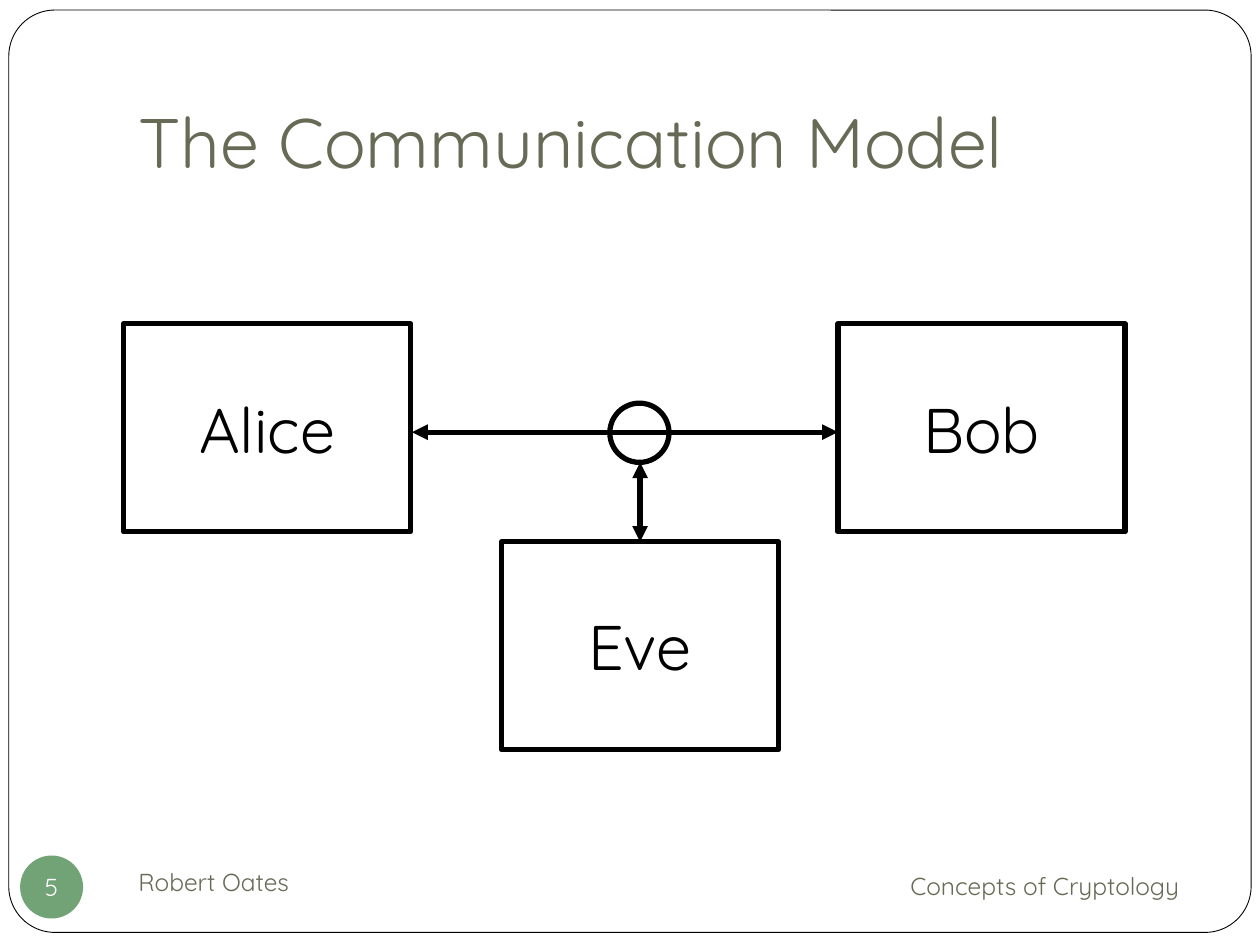
from lxml import etree
from pptx import Presentation
from pptx import util as u
from pptx.dml import color
from pptx.enum import shapes, text
from pptx.oxml import ns

BLACK = color.RGBColor(0x00, 0x00, 0x00)
WHITE = color.RGBColor(0xFF, 0xFF, 0xFF)
OLIVE = color.RGBColor(0x67, 0x6A, 0x55)
GREEN = color.RGBColor(0x72, 0xA3, 0x76)

LEFT, MID, RIGHT = text.PP_ALIGN.LEFT, text.PP_ALIGN.CENTER, text.PP_ALIGN.RIGHT
RECT, OVAL = shapes.MSO_SHAPE.RECTANGLE, shapes.MSO_SHAPE.OVAL
ROUND = shapes.MSO_SHAPE.ROUNDED_RECTANGLE


class Sketch:
    """Draws styled elements on the current slide."""

    font = "Quicksand"
    weight = 3

    def __init__(self, slide):
        self.slide = slide

    def place(self, item, at):
        item.left, item.top, item.width, item.height = map(u.Inches, at)

    def letter(self, item, words, size, tint, align, anchor=text.MSO_ANCHOR.MIDDLE):
        frame = item.text_frame
        frame.text = words
        frame.auto_size = text.MSO_AUTO_SIZE.NONE
        frame.vertical_anchor = anchor
        para = frame.paragraphs[0]
        para.alignment = align
        font = para.runs[0].font
        font.name, font.size = self.font, u.Pt(size)
        font.color.rgb = tint
        return frame

    def title(self, words, at):
        item = self.slide.shapes.title
        self.place(item, at)
        frame = self.letter(item, words, 40, OLIVE, LEFT, text.MSO_ANCHOR.BOTTOM)
        frame.margin_bottom = u.Inches(0.1)

    def label(self, words, at, align):
        item = self.slide.shapes.add_textbox(*map(u.Inches, at))
        self.letter(item, words, 14, OLIVE, align).word_wrap = True

    def shape(self, kind, at, fill=None, line=BLACK, weight=weight):
        item = self.slide.shapes.add_shape(kind, *map(u.Inches, at))
        item.shadow.inherit = False
        if fill is None:
            item.fill.background()
        else:
            item.fill.solid()
            item.fill.fore_color.rgb = fill
        if line is None:
            item.line.fill.background()
        else:
            item.line.color.rgb = line
            item.line.width = u.Pt(weight)
        return item

    def party(self, name, at):
        item = self.shape(RECT, at, WHITE)
        self.letter(item, name, 36, BLACK, MID).word_wrap = False
        return item

    def badge(self, words, at):
        item = self.shape(OVAL, at, GREEN, None)
        frame = self.letter(item, words, 14, WHITE, MID)
        frame.word_wrap = False
        frame.margin_left = frame.margin_right = 0
        frame.margin_top = frame.margin_bottom = 0

    def arrow(self, start, end):
        item = self.slide.shapes.add_connector(
            shapes.MSO_CONNECTOR.STRAIGHT, *map(u.Inches, start + end))
        item.line.color.rgb = BLACK
        item.line.width = u.Pt(self.weight)
        line = item._element.spPr.find(ns.qn("a:ln"))
        for tip in ("a:headEnd", "a:tailEnd"):
            etree.SubElement(line, ns.qn(tip), type="triangle")
        etree.SubElement(item._element.spPr, ns.qn("a:effectLst"))
        return item


def main():
    deck = Presentation()
    deck.slide_width, deck.slide_height = u.Inches(10), u.Inches(7.5)
    pen = Sketch(deck.slides.add_slide(deck.slide_layouts[5]))

    border = pen.shape(ROUND, (0.07, 0.08, 9.86, 7.32), WHITE, weight=0.5)
    border.adjustments[0] = 0.05
    tree = pen.slide.shapes._spTree
    tree.remove(border._element)
    tree.insert(2, border._element)

    pen.title("The Communication Model", (1, 0.3, 8.5, 1.25))
    pen.label("Concepts of Cryptology", (6.75, 6.77, 2.71, 0.52), RIGHT)
    pen.label("Robert Oates", (1, 6.75, 4.33, 0.5), LEFT)
    pen.badge("5", (0.16, 6.79, 0.5, 0.5))

    for name, left in (("Alice", 0.98), ("Bob", 6.65)):
        pen.party(name, (left, 2.57, 2.28, 1.65))
    eve = pen.party("Eve", (3.98, 4.3, 2.2, 1.65))

    pen.arrow((3.27, 3.43), (6.65, 3.43))
    pen.shape(OVAL, (4.84, 3.2, 0.47, 0.47))
    pen.arrow((5.08, 3.67), (5.08, 4.3)).end_connect(eve, 0)

    deck.save("out.pptx")


if __name__ == "__main__":
    main()
